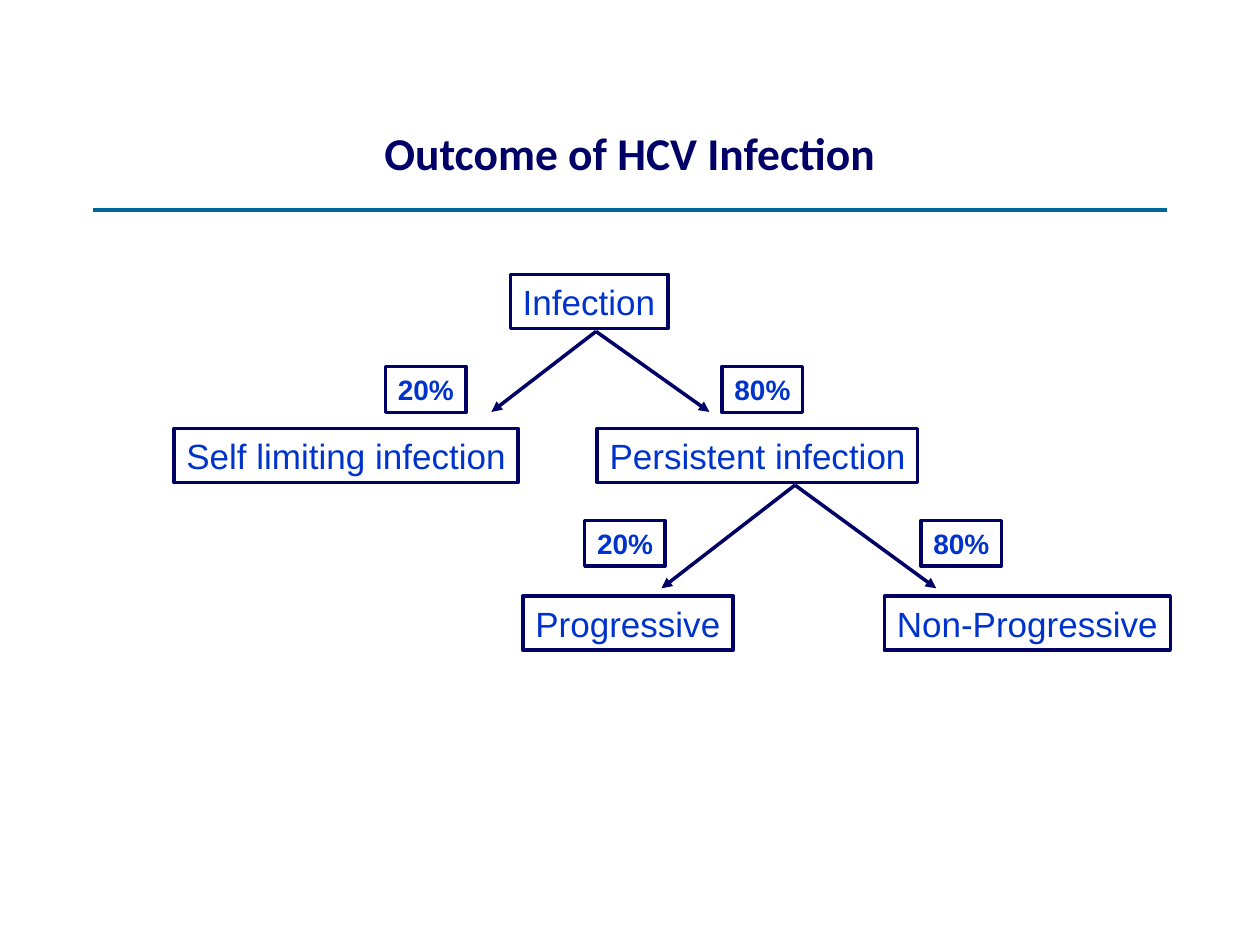
from lxml import etree
from pptx import Presentation
from pptx import util as u
from pptx.dml.color import RGBColor
from pptx.enum import shapes, text
from pptx.oxml import ns

COLORS = {"navy": "000066", "blue": "0033CC", "teal": "006699"}


class FlowSlide:
    body_font = "Arial"
    title_font = "Calibri"
    border = 2

    def __init__(self, slide):
        self.slide = slide

    def color(self, name):
        return RGBColor.from_string(COLORS[name])

    def label(self, frame, words, font, size, color, bold, alignment):
        frame.vertical_anchor = text.MSO_ANCHOR.MIDDLE
        paragraph = frame.paragraphs[0]
        paragraph.alignment = alignment
        run = paragraph.add_run()
        run.text = words
        run.font.name = font
        run.font.size = u.Pt(size)
        run.font.bold = bold
        run.font.color.rgb = self.color(color)

    def title(self, words, left, top, width, height):
        box = self.slide.shapes.add_textbox(*map(u.Pt, (left, top, width, height)))
        box.text_frame.word_wrap = True
        self.label(box.text_frame, words, self.title_font, 26, "navy", True,
                   text.PP_ALIGN.CENTER)

    def box(self, words, left, top, width, height, size=20, bold=False):
        shape = self.slide.shapes.add_shape(
            shapes.MSO_SHAPE.RECTANGLE, *map(u.Pt, (left, top, width, height)))
        shape.shadow.inherit = False
        shape.fill.background()
        shape.line.color.rgb = self.color("navy")
        shape.line.width = u.Pt(self.border)
        shape.text_frame.word_wrap = False
        self.label(shape.text_frame, words, self.body_font, size, "blue", bold,
                   text.PP_ALIGN.LEFT)

    def outcome(self, words, left, top, width):
        self.box(words, left, top, width, 31)

    def share(self, words, left, top):
        self.box(words, left, top, 46, 26.2, size=16, bold=True)

    def line(self, start, end, color, width):
        connector = self.slide.shapes.add_connector(
            shapes.MSO_CONNECTOR.STRAIGHT, *map(u.Pt, start + end))
        connector.line.color.rgb = self.color(color)
        connector.line.width = u.Pt(width)
        etree.SubElement(connector._element.spPr, ns.qn("a:effectLst"))
        return connector

    def arrow(self, tip, origin):
        connector = self.line(tip, origin, "navy", self.border)
        outline = connector._element.spPr.find(ns.qn("a:ln"))
        head = etree.SubElement(outline, ns.qn("a:headEnd"))
        head.set("type", "triangle")

    def branch(self, origin, tips_left, tips_top, shares_left, shares_top):
        for words, left in zip(("20%", "80%"), shares_left):
            self.share(words, left, shares_top)
        for left in tips_left:
            self.arrow((left, tips_top), origin)


def main():
    presentation = Presentation()
    presentation.slide_width = u.Pt(720)
    presentation.slide_height = u.Pt(540)
    flow = FlowSlide(presentation.slides.add_slide(presentation.slide_layouts[6]))

    flow.line((53.3, 120), (666.7, 120), "teal", 2.25)
    for outcome in (
        ("Infection", 291.6, 156.8, 90),
        ("Self limiting infection", 99.4, 244.8, 196.6),
        ("Persistent infection", 341.3, 244.8, 183),
        ("Progressive", 298.8, 340.6, 120.2),
        ("Non-Progressive", 505.4, 340.6, 163.4),
    ):
        flow.outcome(*outcome)
    flow.branch((340.6, 189.4), (280.8, 405.4), 235.4, (220.3, 412.6), 209.5)
    flow.branch((454.3, 277.2), (378, 535), 336.2, (334.1, 526.3), 297.4)
    flow.title("Outcome of HCV Infection", 54, 54, 612, 66)

    presentation.save("out.pptx")


if __name__ == "__main__":
    main()
